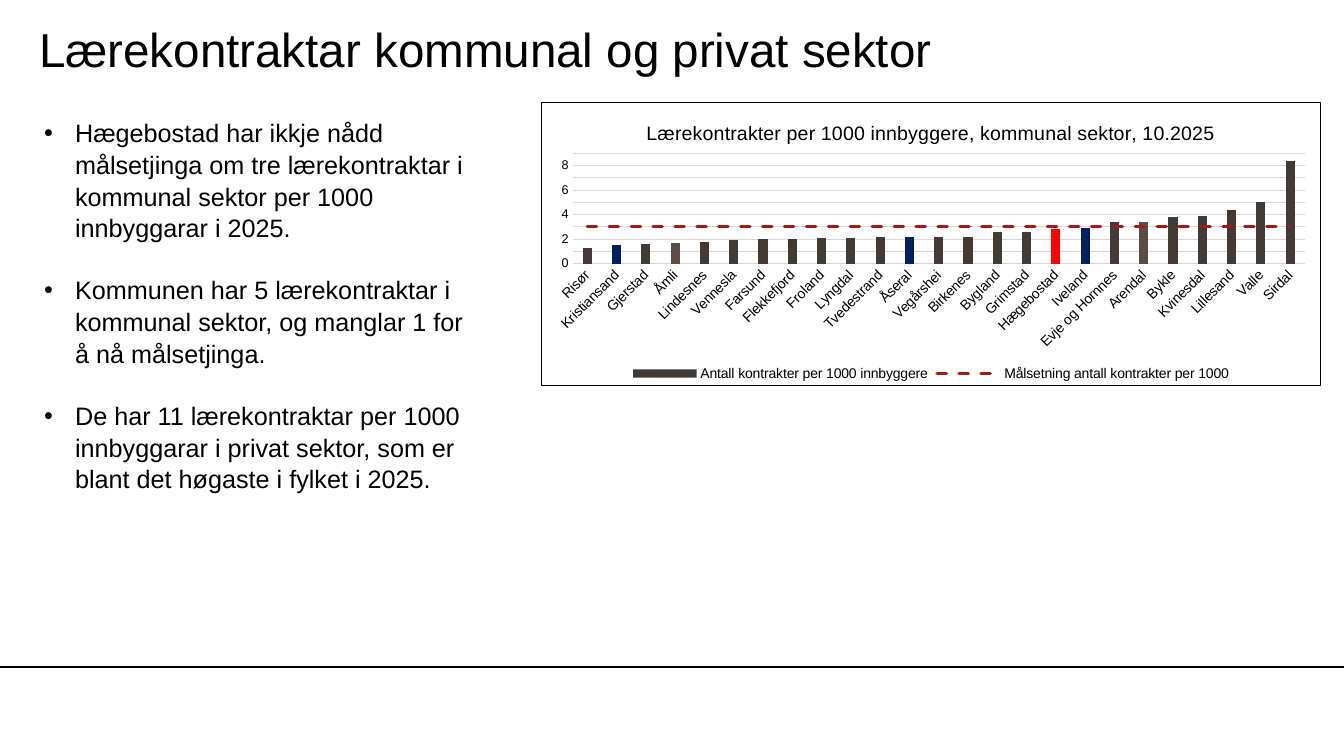
from dataclasses import dataclass

from lxml import etree
from pptx import Presentation
from pptx import util as u
from pptx.chart.data import CategoryChartData
from pptx.dml.color import RGBColor
from pptx.enum import chart as ch, dml, shapes, text
from pptx.oxml import parse_xml
from pptx.oxml.ns import nsdecls, qn

TITLE = "Lærekontraktar kommunal og privat sektor"
BULLETS = [
    "Hægebostad har ikkje nådd målsetjinga om tre lærekontraktar i kommunal sektor per 1000 innbyggarar i 2025.",
    "Kommunen har 5 lærekontraktar i kommunal sektor, og manglar 1 for å nå målsetjinga.",
    "De har 11 lærekontraktar per 1000 innbyggarar i privat sektor, som er blant det høgaste i fylket i 2025.",
]
CHART_TITLE = "Lærekontrakter per 1000 innbyggere, kommunal sektor, 10.2025"
CONTRACTS_NAME = "Antall kontrakter per 1000 innbyggere"
TARGET_NAME = "Målsetning antall kontrakter per 1000"
TARGET = 3
CONTRACTS = {
    "Risør": 1.3, "Kristiansand": 1.5, "Gjerstad": 1.6, "Åmli": 1.7, "Lindesnes": 1.8,
    "Vennesla": 1.9, "Farsund": 2, "Flekkefjord": 2, "Froland": 2.1, "Lyngdal": 2.1,
    "Tvedestrand": 2.2, "Åseral": 2.2, "Vegårshei": 2.2, "Birkenes": 2.2, "Bygland": 2.6,
    "Grimstad": 2.6, "Hægebostad": 2.8, "Iveland": 2.9, "Evje og Hornnes": 3.4, "Arendal": 3.4,
    "Bykle": 3.8, "Kvinesdal": 3.9, "Lillesand": 4.4, "Valle": 5, "Sirdal": 8.4,
}


@dataclass(frozen=True)
class Theme:
    font: str = "Arial"
    ink: str = "000000"
    grid: str = "D9D9D9"
    bar: str = "443A34"
    light_bar: str = "5B4D46"
    blue: str = "002060"
    red: str = "FF0000"
    target: str = "A71716"
    title: int = 34
    body: int = 18
    chart_title: int = 14
    label: int = 10
    small: int = 9


THEME = Theme()
HIGHLIGHTS = {
    "Kristiansand": THEME.blue, "Åseral": THEME.blue, "Iveland": THEME.blue,
    "Åmli": THEME.light_bar, "Arendal": THEME.light_bar, "Hægebostad": THEME.red,
}
PX = 914400 / 100.8
SLIDE = (1344, 756)
TITLE_BOX = (39, 10, 1119, 76)
BODY_BOX = (34, 111, 452, 468)
CHART_BOX = (541, 102, 780, 284)
PLOT_BOX = (571, 153, 735, 110)
CHART_TITLE_AT = (646, 117)
RULE_Y = 667
INDENT = 31


def emu(px):
    return round(px * PX)


def place(shape, box):
    shape.left, shape.top, shape.width, shape.height = map(emu, box)


def style(font, size, color=THEME.ink):
    font.name, font.size, font.bold = THEME.font, u.Pt(size), False
    font.color.rgb = RGBColor.from_string(color)


def paint(fill, color):
    fill.solid()
    fill.fore_color.rgb = RGBColor.from_string(color)


def stroke(line, color, width=0.75):
    paint(line.fill, color)
    line.width = u.Pt(width)


def add_bullet(para):
    props = para._p.get_or_add_pPr()
    props.set("marL", str(emu(INDENT)))
    props.set("indent", str(-emu(INDENT)))
    etree.SubElement(props, qn("a:buFont")).set("typeface", THEME.font)
    etree.SubElement(props, qn("a:buChar")).set("char", "•")


def manual_layout(parent, index, values, inner=False):
    for old in parent.findall(qn("c:layout")):
        parent.remove(old)
    layout = etree.Element(qn("c:layout"))
    manual = etree.SubElement(layout, qn("c:manualLayout"))
    settings = [("layoutTarget", "inner")] if inner else []
    settings += [("xMode", "edge"), ("yMode", "edge")]
    settings += [(key, f"{value:.2f}") for key, value in zip("xywh", values)]
    for key, value in settings:
        etree.SubElement(manual, qn("c:" + key)).set("val", value)
    parent.insert(index, layout)


def chart_share(box):
    left, top, width, height = CHART_BOX
    x, y, *size = box
    return [(x - left) / width, (y - top) / height,
            *(part / whole for part, whole in zip(size, (width, height)))]


def split_target_line(chart):
    bars = chart.plots[0]._element
    target = bars.findall(qn("c:ser"))[1]
    for flag in target.findall(qn("c:invertIfNegative")):
        target.remove(flag)
    line_plot = parse_xml(
        f'<c:lineChart {nsdecls("c")}><c:grouping val="standard"/>'
        '<c:varyColors val="0"/><c:marker val="1"/></c:lineChart>')
    line_plot.insert(2, target)
    for axis in bars.findall(qn("c:axId")):
        etree.SubElement(line_plot, qn("c:axId")).set("val", axis.get("val"))
    bars.addnext(line_plot)


def add_contract_chart(page):
    data = CategoryChartData()
    data.categories = list(CONTRACTS)
    data.add_series(CONTRACTS_NAME, list(CONTRACTS.values()))
    data.add_series(TARGET_NAME, [TARGET] * len(CONTRACTS))
    chart = page.shapes.add_chart(
        ch.XL_CHART_TYPE.COLUMN_CLUSTERED, *map(emu, CHART_BOX), data).chart
    style(chart.font, THEME.label)
    split_target_line(chart)

    bars, line = chart.plots
    bars.gap_width, bars.overlap, bars.vary_by_categories = 219, -27, False
    contracts, target = bars.series[0], line.series[0]
    paint(contracts.format.fill, THEME.bar)
    contracts.invert_if_negative = False
    for index, town in enumerate(CONTRACTS):
        if town in HIGHLIGHTS:
            paint(contracts.points[index].format.fill, HIGHLIGHTS[town])
    stroke(target.format.line, THEME.target, 2.25)
    target.format.line.dash_style = dml.MSO_LINE.DASH
    target._element.find(".//" + qn("a:ln")).set("cap", "rnd")
    target.marker.style = ch.XL_MARKER_STYLE.NONE
    target.smooth = False

    towns, values = chart.category_axis, chart.value_axis
    for axis, size in ((towns, THEME.label), (values, THEME.small)):
        axis.major_tick_mark = axis.minor_tick_mark = ch.XL_TICK_MARK.NONE
        style(axis.tick_labels.font, size)
    towns._element.find(qn("c:txPr")).find(qn("a:bodyPr")).set("rot", "-2700000")
    stroke(towns.format.line, THEME.grid)
    values.minimum_scale, values.maximum_scale, values.major_unit = 0, 9, 1
    values.tick_labels.number_format = "0"
    values.tick_labels.number_format_is_linked = False
    values.format.line.fill.background()
    stroke(values.major_gridlines.format.line, THEME.grid)

    chart.has_legend = True
    chart.legend.position = ch.XL_LEGEND_POSITION.BOTTOM
    chart.legend.include_in_layout = False
    style(chart.legend.font, THEME.label)
    chart.has_title = True
    span = chart.chart_title.text_frame.paragraphs[0].add_run()
    span.text = CHART_TITLE
    style(span.font, THEME.chart_title)
    manual_layout(chart.chart_title._element, 1, chart_share(CHART_TITLE_AT))
    plot_area = chart._chartSpace.chart.plotArea
    manual_layout(plot_area, 0, chart_share(PLOT_BOX), inner=True)
    chart._chartSpace.chart.addnext(parse_xml(
        f'<c:spPr {nsdecls("c", "a")}><a:noFill/><a:ln w="{u.Pt(0.75)}"><a:solidFill>'
        f'<a:srgbClr val="{THEME.ink}"/></a:solidFill></a:ln></c:spPr>'))


def main():
    deck = Presentation()
    deck.slide_width, deck.slide_height = map(emu, SLIDE)
    page = deck.slides.add_slide(deck.slide_layouts[1])

    rule = page.shapes.add_connector(
        shapes.MSO_CONNECTOR.STRAIGHT, 0, emu(RULE_Y), emu(SLIDE[0]), emu(RULE_Y))
    stroke(rule.line, THEME.ink)
    etree.SubElement(rule._element.spPr, qn("a:effectLst"))

    title = page.shapes.title
    place(title, TITLE_BOX)
    frame = title.text_frame
    frame.margin_left = frame.margin_right = frame.margin_top = frame.margin_bottom = 0
    frame.vertical_anchor = text.MSO_ANCHOR.MIDDLE
    frame.auto_size = text.MSO_AUTO_SIZE.NONE
    para = frame.paragraphs[0]
    para.alignment = text.PP_ALIGN.LEFT
    span = para.add_run()
    span.text = TITLE
    style(span.font, THEME.title)

    body = page.placeholders[1]
    place(body, BODY_BOX)
    frame = body.text_frame
    frame.auto_size = text.MSO_AUTO_SIZE.NONE
    for index, line in enumerate(BULLETS):
        para = frame.paragraphs[0] if index == 0 else frame.add_paragraph()
        add_bullet(para)
        para.line_spacing = 1.05
        para.space_before = u.Pt(21.6 if index else 0)
        span = para.add_run()
        span.text = line
        style(span.font, THEME.body)

    add_contract_chart(page)
    deck.save("out.pptx")


if __name__ == "__main__":
    main()
